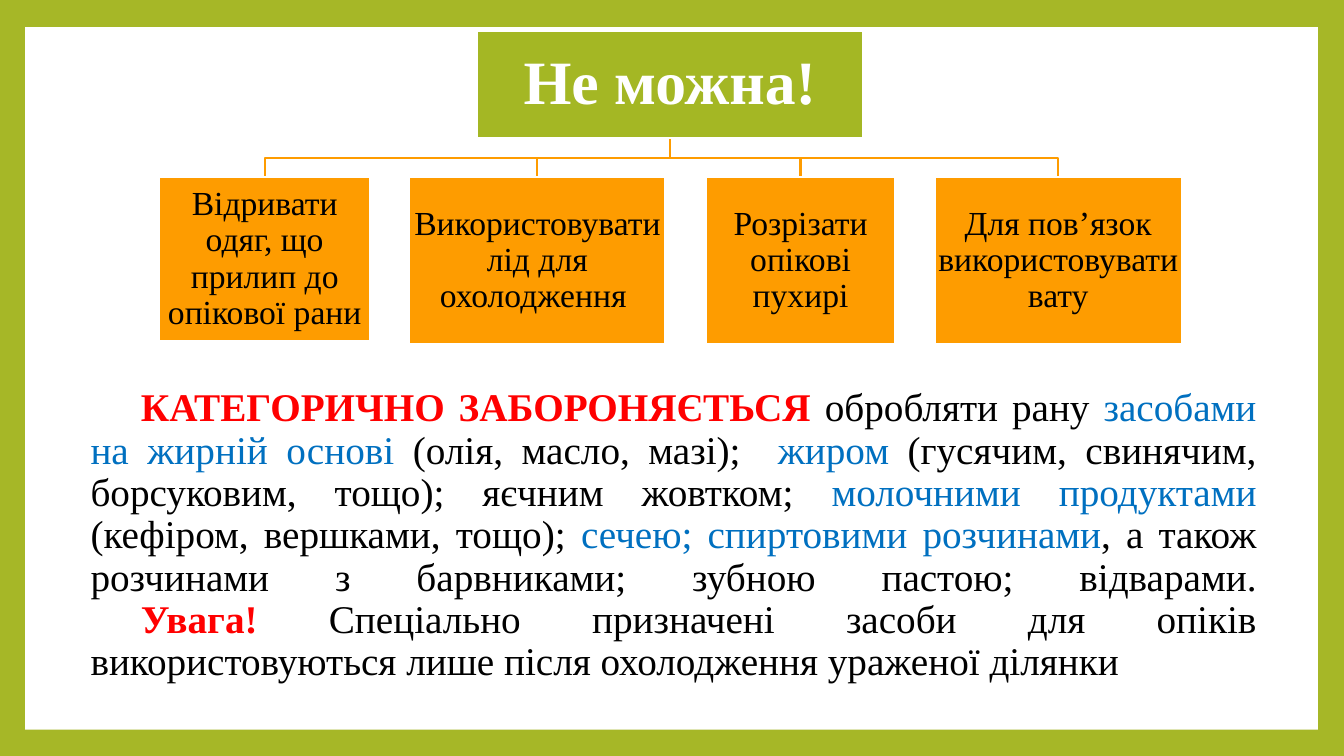
"""Build a slide on what must not be done when treating a burn."""
from dataclasses import dataclass

from lxml.etree import SubElement
from pptx import Presentation
from pptx.dml.color import RGBColor
from pptx.enum.shapes import MSO_SHAPE
from pptx.enum.text import MSO_ANCHOR, PP_ALIGN
from pptx.oxml.ns import qn
from pptx.shapes.autoshape import Shape
from pptx.slide import Slide
from pptx.text.text import TextFrame, _Paragraph
from pptx.util import Inches, Pt

COLORS = {
    "frame": "A6B727",
    "heading": "A4B724",
    "ban": "FE9C00",
    "white": "FFFFFF",
    "black": "000000",
    "alarm": "FF0000",
    "accent": "0070C0",
}
FONT = "Times New Roman"
LINE_WIDTH = Pt(1.5)


@dataclass(frozen=True)
class Box:
    left: float
    top: float
    width: float
    height: float
    text: str
    fill: str = "ban"
    ink: str = "black"
    size: int = 24
    bold: bool = False
    inset: float = 0.02

    @property
    def center(self) -> float:
        return self.left + self.width / 2


@dataclass(frozen=True)
class Phrase:
    text: str
    ink: str = "black"
    bold: bool = False


HEADING = Box(4.73, 0.31, 3.83, 1.06, "Не можна!", "heading", "white", 44, True, 0.03)
BANS = [
    Box(1.58, 1.76, 2.09, 1.62, "Відривати одяг, що прилип до опікової рани"),
    Box(4.06, 1.76, 2.54, 1.65, "Використовувати лід для охолодження "),
    Box(7, 1.76, 1.88, 1.65, "Розрізати опікові пухирі"),
    Box(9.27, 1.76, 2.45, 1.65, "Для пов’язок використовувати вату"),
]
FORBIDDEN = [
    Phrase("КАТЕГОРИЧНО ЗАБОРОНЯЄТЬСЯ ", "alarm", True),
    Phrase("обробляти рану "),
    Phrase("засобами на жирній основі", "accent"),
    Phrase(" (олія, масло, мазі);  "),
    Phrase("жиром", "accent"),
    Phrase(" (гусячим, свинячим, борсуковим, тощо); яєчним жовтком; "),
    Phrase("молочними продуктами ", "accent"),
    Phrase("(кефіром, вершками, тощо); "),
    Phrase("сечею; спиртовими розчинами", "accent"),
    Phrase(", а також розчинами з барвниками; зубною пастою; відварами."),
]
WARNING = [
    Phrase("\tУвага! ", "alarm", True),
    Phrase(
        "Спеціально призначені засоби для опіків використовуються "
        "лише після охолодження ураженої ділянки"
    ),
]


def color(name: str) -> RGBColor:
    return RGBColor.from_string(COLORS[name])


def add_run(paragraph: _Paragraph, phrase: Phrase, size: int) -> None:
    run = paragraph.add_run()
    run.text = phrase.text
    run.font.name = FONT
    run.font.size = Pt(size)
    run.font.bold = phrase.bold
    run.font.color.rgb = color(phrase.ink)


def prepare_text(frame: TextFrame, inset_x: float, inset_y: float, align: PP_ALIGN) -> _Paragraph:
    frame.word_wrap = True
    frame.vertical_anchor = MSO_ANCHOR.MIDDLE
    frame.margin_left = frame.margin_right = Inches(inset_x)
    frame.margin_top = frame.margin_bottom = Inches(inset_y)
    paragraph = frame.paragraphs[0]
    paragraph.alignment = align
    paragraph.line_spacing = 0.9
    return paragraph


def add_rectangle(
    slide: Slide, left: float, top: float, width: float, height: float, fill: str
) -> Shape:
    rectangle = slide.shapes.add_shape(
        MSO_SHAPE.RECTANGLE, Inches(left), Inches(top), Inches(width), Inches(height)
    )
    rectangle.shadow.inherit = False
    rectangle.fill.solid()
    rectangle.fill.fore_color.rgb = color(fill)
    rectangle.line.fill.background()
    return rectangle


def add_box(slide: Slide, box: Box) -> None:
    rectangle = add_rectangle(slide, box.left, box.top, box.width, box.height, box.fill)
    rectangle.line.color.rgb = color("white")
    rectangle.line.width = LINE_WIDTH
    paragraph = prepare_text(rectangle.text_frame, box.inset, box.inset, PP_ALIGN.CENTER)
    add_run(paragraph, Phrase(box.text, box.ink, box.bold), box.size)


def add_branch(slide: Slide, parent: Box, child: Box) -> None:
    start = parent.top + parent.height
    middle = (start + child.top) / 2
    corners = [(parent.center, middle), (child.center, middle), (child.center, child.top)]
    builder = slide.shapes.build_freeform(Inches(parent.center), Inches(start))
    builder.add_line_segments([(Inches(x), Inches(y)) for x, y in corners], close=False)
    branch = builder.convert_to_shape()
    branch.shadow.inherit = False
    branch.fill.background()
    branch.line.color.rgb = color("ban")
    branch.line.width = LINE_WIDTH


def add_rules(slide: Slide) -> None:
    rules = slide.shapes.add_textbox(Inches(0.8), Inches(3.51), Inches(11.76), Inches(3.62))
    paragraph = prepare_text(rules.text_frame, 0.1, 0.05, PP_ALIGN.JUSTIFY)
    properties = paragraph._p.get_or_add_pPr()
    properties.set("marL", "0")
    properties.set("indent", str(Inches(0.5)))
    stops = SubElement(properties, qn("a:tabLst"))
    SubElement(stops, qn("a:tab"), pos=str(Inches(2.6)), algn="l")
    for phrase in FORBIDDEN:
        add_run(paragraph, phrase, 28)
    paragraph.add_line_break()
    for phrase in WARNING:
        add_run(paragraph, phrase, 28)


def main() -> None:
    presentation = Presentation()
    presentation.slide_width = Inches(13.33)
    presentation.slide_height = Inches(7.5)
    slide = presentation.slides.add_slide(presentation.slide_layouts[6])
    slide.background.fill.solid()
    slide.background.fill.fore_color.rgb = color("frame")
    add_rectangle(slide, 0.25, 0.27, 12.82, 6.97, "white")
    add_rules(slide)
    for ban in BANS:
        add_branch(slide, HEADING, ban)
    for box in [HEADING, *BANS]:
        add_box(slide, box)
    presentation.save("out.pptx")


if __name__ == "__main__":
    main()
